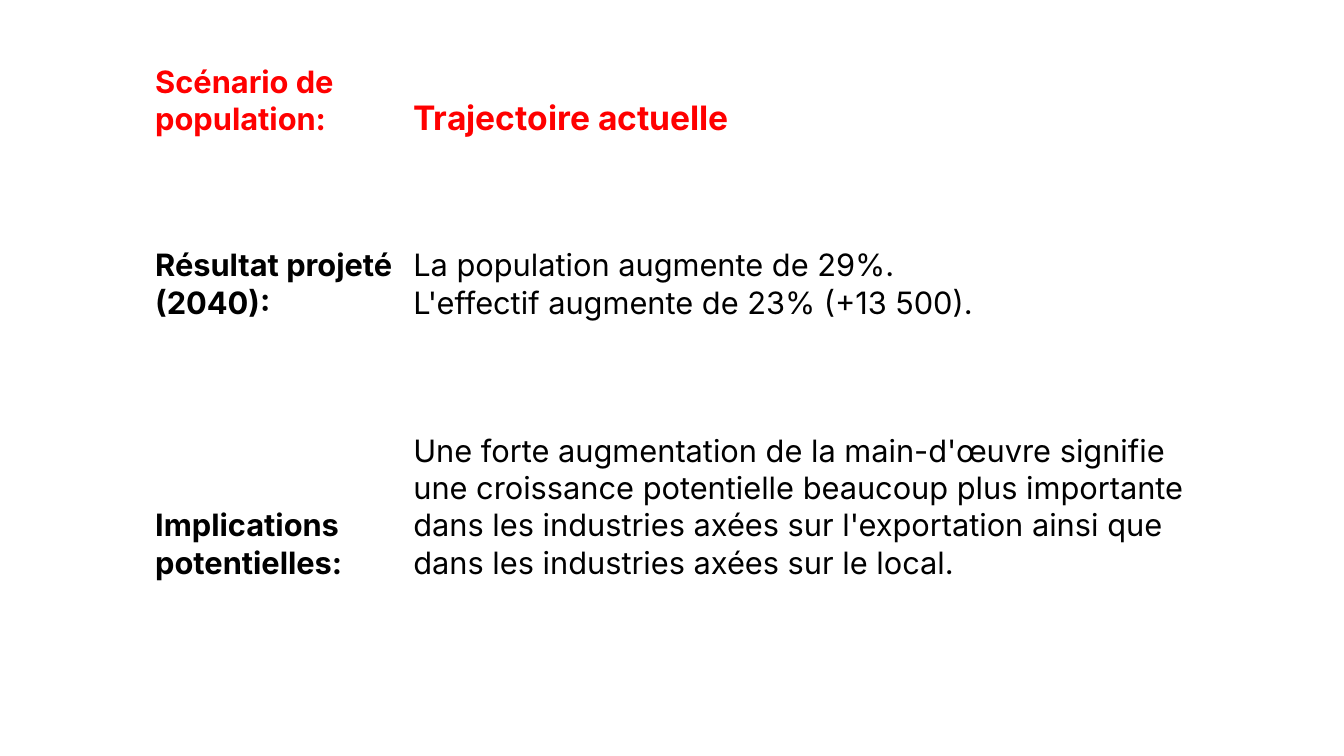
import pptx
import pptx.util
import pptx.dml.color
import pptx.enum.text
import pptx.oxml
import pptx.oxml.ns

# Content: label, lines of the answer, text colour, answer size, answer bold
RED, BLACK, WHITE = "FF0000", "000000", "FFFFFF"
SCENARIO = [
    ("Scénario de population:", ["Trajectoire actuelle"], RED, 24, True),
    ("Résultat projeté (2040):",
     ["La population augmente de 29%.",
      "L'effectif augmente de 23% (+13 500)."], BLACK, 22, False),
    ("Implications potentielles:",
     ["Une forte augmentation de la main-d'œuvre signifie une croissance "
      "potentielle beaucoup plus importante dans les industries axées sur "
      "l'exportation ainsi que dans les industries axées sur le local."],
     BLACK, 22, False),
]
LABEL_SIZE = 22

# Grid in inches; the last two rows stay empty
LEFT, TOP = 1.53, 0.36
COLUMNS = [2.56, 8.05]
ROWS = [1.01, 1.82, 2.58, 0.97, 1.1]


def inches(length):
    return pptx.util.Inches(length)


def color(value):
    return pptx.dml.color.RGBColor.from_string(value)


def style_cell(cell):
    cell.fill.background()
    cell.vertical_anchor = pptx.enum.text.MSO_ANCHOR.BOTTOM
    cell.margin_left = cell.margin_right = cell.margin_top = inches(0.01)
    cell.margin_bottom = 0
    properties = cell._tc.get_or_add_tcPr()
    for position, side in enumerate(("lnL", "lnR", "lnT", "lnB")):
        border = pptx.oxml.parse_xml(
            f'<a:{side} {pptx.oxml.ns.nsdecls("a")} w="12700"><a:solidFill>'
            f'<a:srgbClr val="{WHITE}"/></a:solidFill></a:{side}>')
        properties.insert(position, border)


def write_cell(cell, lines, ink, size, bold):
    cell.text = "\n".join(lines)
    for paragraph in cell.text_frame.paragraphs:
        paragraph.font.name = "Inter"
        paragraph.font.size = pptx.util.Pt(size)
        paragraph.font.bold = bold
        paragraph.font.color.rgb = color(ink)


def main():
    deck = pptx.Presentation()
    deck.slide_width, deck.slide_height = inches(13.33), inches(7.5)
    slide = deck.slides.add_slide(deck.slide_layouts[6])

    # Empty grid
    table = slide.shapes.add_table(
        len(ROWS), len(COLUMNS), inches(LEFT), inches(TOP),
        inches(sum(COLUMNS)), inches(sum(ROWS))).table
    table.first_row = table.horz_banding = False
    for column, width in zip(table.columns, COLUMNS):
        column.width = inches(width)
    for row, height in zip(table.rows, ROWS):
        row.height = inches(height)
    for cell in table.iter_cells():
        style_cell(cell)

    # Labels and answers
    for row, (label, answer, ink, size, bold) in enumerate(SCENARIO):
        write_cell(table.cell(row, 0), [label], ink, LABEL_SIZE, True)
        write_cell(table.cell(row, 1), answer, ink, size, bold)

    deck.save("out.pptx")


if __name__ == "__main__":
    main()
